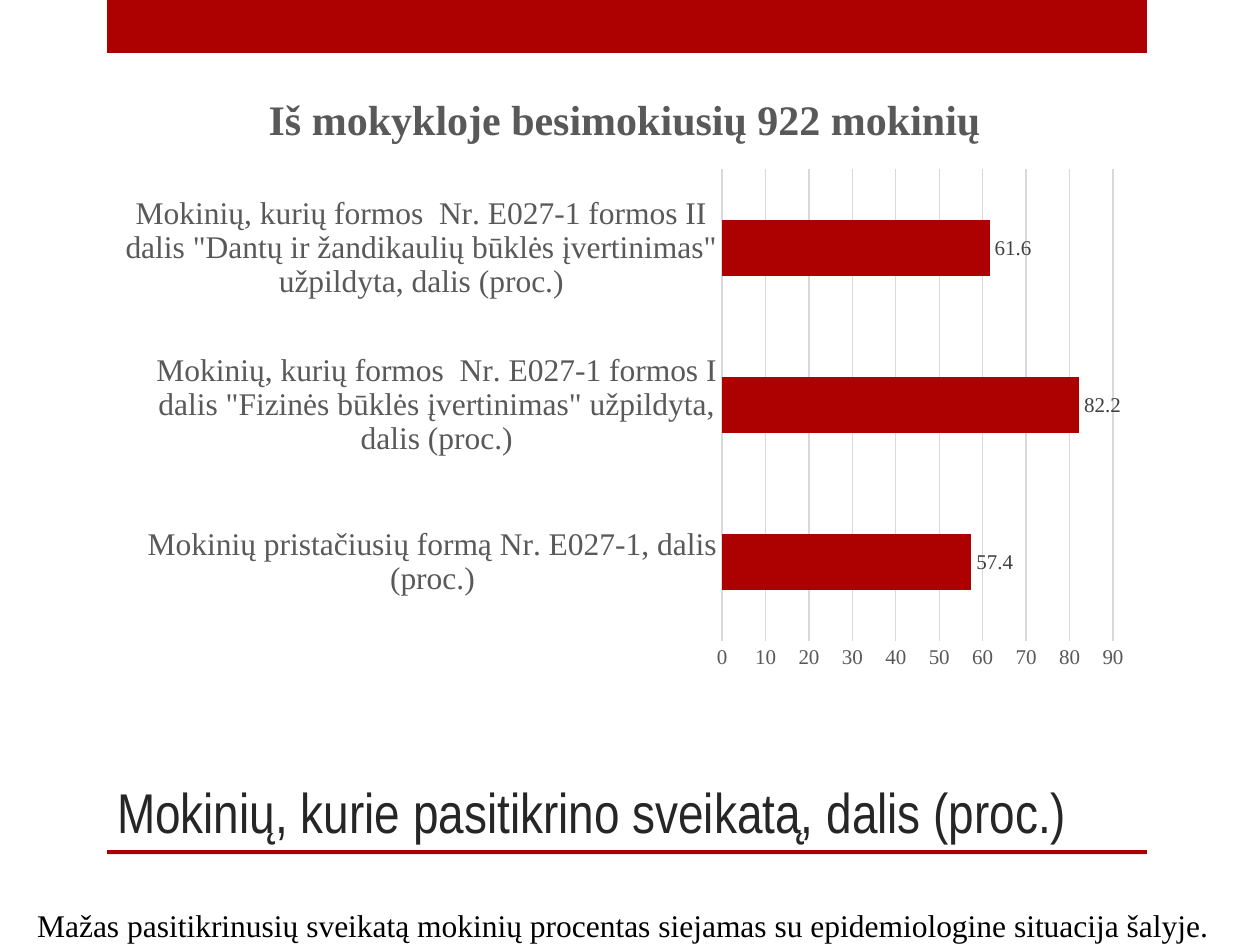
from pptx import Presentation
from pptx.chart.data import CategoryChartData
from pptx.dml.color import RGBColor
from pptx.enum.chart import XL_CHART_TYPE, XL_LABEL_POSITION, XL_TICK_MARK
from pptx.enum.shapes import MSO_SHAPE
from pptx.enum.text import MSO_ANCHOR, PP_ALIGN
from pptx.util import Cm, Pt

BAR = XL_CHART_TYPE.BAR_CLUSTERED
OUTSIDE = XL_LABEL_POSITION.OUTSIDE_END
NO_TICK = XL_TICK_MARK.NONE
RECT = MSO_SHAPE.RECTANGLE
TOP, BOTTOM = MSO_ANCHOR.TOP, MSO_ANCHOR.BOTTOM
LEFT, JUSTIFY = PP_ALIGN.LEFT, PP_ALIGN.JUSTIFY

RED, GREY, PALE = "AD0101", "595959", "D9D9D9"
SERIF, NARROW = "Times New Roman", "Arial Narrow"
HEAD = "Iš mokykloje besimokiusių 922 mokinių"
ROWS = [
    ("Mokinių pristačiusių formą Nr. E027-1, dalis (proc.)", 57.4),
    ('Mokinių, kurių formos  Nr. E027-1 formos I dalis "Fizinės būklės įvertinimas" užpildyta, dalis (proc.)', 82.2),
    ('Mokinių, kurių formos  Nr. E027-1 formos II dalis "Dantų ir žandikaulių būklės įvertinimas" užpildyta, dalis (proc.)', 61.6),
]


def color(code):
    return RGBColor.from_string(code)


def style(font, size, code, name=SERIF, bold=False):
    font.size = Pt(size)
    font.name = name
    font.bold = bold
    font.color.rgb = color(code)


def rule(line, code):
    line.color.rgb = color(code)
    line.width = Pt(0.75)


def add_band(slide, x, y, w, h):
    band = slide.shapes.add_shape(RECT, Cm(x), Cm(y), Cm(w), Cm(h))
    band.shadow.inherit = False
    band.fill.solid()
    band.fill.fore_color.rgb = color(RED)
    band.line.fill.background()


def add_frame(slide, x, y, w, h):
    add_band(slide, x, y, w, 1.07)
    add_band(slide, x, y + h - 0.08, w, 0.08)


def add_text(slide, x, y, w, h, text, size, code, name, anchor, align):
    frame = slide.shapes.add_textbox(Cm(x), Cm(y), Cm(w), Cm(h)).text_frame
    frame.word_wrap = True
    frame.vertical_anchor = anchor
    par = frame.paragraphs[0]
    par.alignment = align
    run = par.add_run()
    run.text = text
    style(run.font, size, code, name)


def add_bars(slide, x, y, w, h):
    data = CategoryChartData()
    data.categories = [label for label, share in ROWS]
    data.add_series(HEAD, [share for label, share in ROWS])
    chart = slide.shapes.add_chart(BAR, Cm(x), Cm(y), Cm(w), Cm(h), data).chart
    style(chart.font, 10, "000000")
    chart.has_legend = False
    chart.has_title = True
    run = chart.chart_title.text_frame.paragraphs[0].add_run()
    run.text = HEAD
    style(run.font, 24, GREY, bold=True)
    chart.chart_title.include_in_layout = False

    for axis, size in ((chart.category_axis, 18), (chart.value_axis, 12)):
        axis.major_tick_mark = NO_TICK
        axis.minor_tick_mark = NO_TICK
        style(axis.tick_labels.font, size, GREY)
    rule(chart.category_axis.format.line, PALE)
    chart.value_axis.format.line.fill.background()
    rule(chart.value_axis.major_gridlines.format.line, PALE)

    plot = chart.plots[0]
    plot.gap_width = 182
    plot.vary_by_categories = False
    bars = plot.series[0]
    bars.invert_if_negative = False
    bars.format.fill.solid()
    bars.format.fill.fore_color.rgb = color(RED)
    labels = bars.data_labels
    labels.show_value = True
    labels.position = OUTSIDE
    style(labels.font, 12, "404040")


def main():
    deck = Presentation()
    deck.slide_width, deck.slide_height = Cm(25.4), Cm(19.05)
    slide = deck.slides.add_slide(deck.slide_layouts[6])
    add_frame(slide, 2.16, 0, 20.96, 17.22)
    add_text(slide, 2.11, 12.7, 21.18, 4.45,
             "Mokinių, kurie pasitikrino sveikatą, dalis (proc.)",
             32, "262626", NARROW, BOTTOM, JUSTIFY)
    add_bars(slide, 2.11, 1.32, 20.96, 12.4)
    add_text(slide, 0.5, 18.14, 24.2, 1.02,
             "Mažas pasitikrinusių sveikatą mokinių procentas siejamas su epidemiologine situacija šalyje.",
             18, "000000", SERIF, TOP, LEFT)
    deck.save("out.pptx")


if __name__ == "__main__":
    main()
